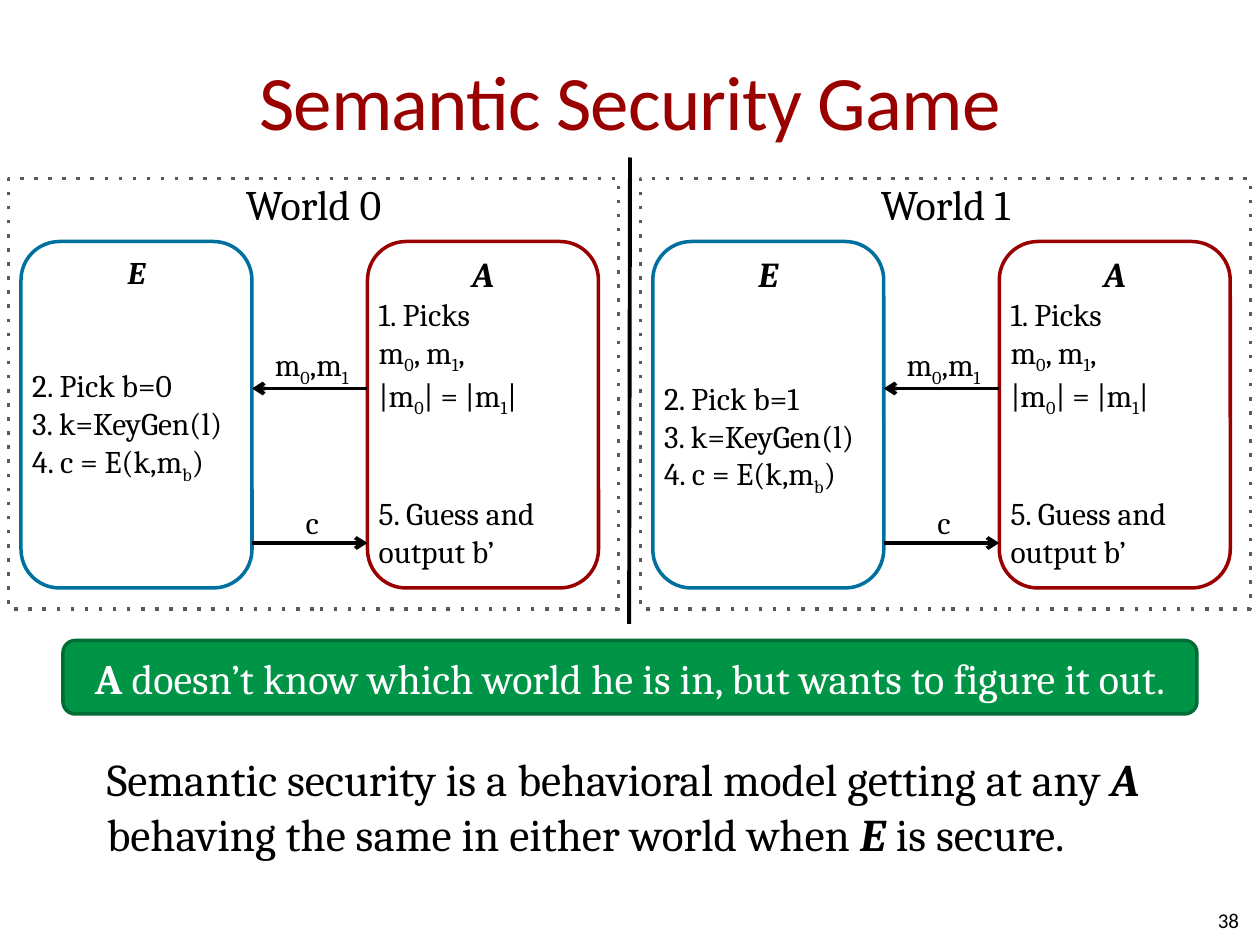
from lxml import etree
from pptx import Presentation
from pptx.dml.color import RGBColor
from pptx.enum.shapes import MSO_CONNECTOR, MSO_SHAPE
from pptx.enum.text import MSO_ANCHOR, PP_ALIGN
from pptx.oxml.ns import qn
from pptx.util import Pt

LEFT, CENTER, RIGHT = PP_ALIGN.LEFT, PP_ALIGN.CENTER, PP_ALIGN.RIGHT
TOP, MIDDLE = MSO_ANCHOR.TOP, MSO_ANCHOR.MIDDLE
RECT, ROUNDED = MSO_SHAPE.RECTANGLE, MSO_SHAPE.ROUNDED_RECTANGLE
STRAIGHT = MSO_CONNECTOR.STRAIGHT

BLACK, WHITE, RED, BLUE = "000000", "FFFFFF", "990000", "00709E"
GRAY, GREEN, DARK_GREEN = "595A5A", "009446", "006D34"
LINE_HEIGHT = 1.2


def rgb(value):
    return RGBColor.from_string(value)


def write(shape, text, size=18, font="Cambria", color=BLACK, align=LEFT,
          before=0, italic=True, tracking=0):
    """Add a paragraph; *x* is emphasised, _x is a subscript character."""
    frame = shape.text_frame
    first = frame.paragraphs[0]
    paragraph = frame.add_paragraph() if first.runs else first
    paragraph.alignment = align
    paragraph.space_before = Pt(before)

    def add_run(words, strong, subscript=False):
        run = paragraph.add_run()
        run.text = words
        run.font.size = Pt(size)
        run.font.name = font
        run.font.color.rgb = rgb(color)
        run.font.bold = strong
        run.font.italic = strong and italic
        properties = run.font._element
        if subscript:
            properties.set("baseline", "-25000")
        if tracking:
            properties.set("spc", str(int(tracking * 100)))

    for row, line in enumerate(text.split("\n")):
        if row:
            paragraph.add_line_break()
        for index, piece in enumerate(line.split("*")):
            strong = index % 2 == 1
            for order, part in enumerate(piece.split("_")):
                if order:
                    add_run(part[0], strong, subscript=True)
                    part = part[1:]
                if part:
                    add_run(part, strong)


def set_frame(shape, anchor, inset_x, inset_y):
    frame = shape.text_frame
    frame.word_wrap = True
    frame.vertical_anchor = anchor
    frame.margin_left = frame.margin_right = Pt(inset_x)
    frame.margin_top = frame.margin_bottom = Pt(inset_y)


def add_text(slide, box, text, anchor=TOP, inset_x=7.2, inset_y=3.6, **style):
    label = slide.shapes.add_textbox(*map(Pt, box))
    set_frame(label, anchor, inset_x, inset_y)
    write(label, text, **style)


def add_box(slide, kind, box, line, fill=None, anchor=TOP):
    shape = slide.shapes.add_shape(kind, *map(Pt, box))
    shape.shadow.inherit = False
    if fill:
        shape.fill.solid()
        shape.fill.fore_color.rgb = rgb(fill)
    else:
        shape.fill.background()
    shape.line.color.rgb = rgb(line)
    shape.line.width = Pt(2)
    set_frame(shape, anchor, 0, 0)
    return shape


def add_line(slide, start, end, arrow=False):
    line = slide.shapes.add_connector(STRAIGHT, *map(Pt, start + end))
    line.line.color.rgb = rgb(BLACK)
    line.line.width = Pt(2.25)
    properties = line.element.spPr
    if arrow:
        etree.SubElement(properties.find(qn("a:ln")), qn("a:tailEnd"), type="arrow")
    etree.SubElement(properties, qn("a:effectLst"))


def add_world(slide, box, bit, encryptor_size):
    left, top, width, height = box
    party_top, party_width, party_height = top + 36, 132, 198
    encryptor_left, adversary_left = left + 7, left + 205
    encryptor_right = encryptor_left + party_width

    encryptor = add_box(slide, ROUNDED,
                        (encryptor_left, party_top, party_width, party_height),
                        BLUE, WHITE)
    write(encryptor, "*E*", size=encryptor_size, align=CENTER)
    write(encryptor, f"2. Pick b={bit}", before=2 * LINE_HEIGHT * encryptor_size)
    write(encryptor, "3. k=KeyGen(l)")
    write(encryptor, "4. c = E(k,m_b)")

    adversary = add_box(slide, ROUNDED,
                        (adversary_left, party_top, party_width, party_height),
                        RED, WHITE)
    write(adversary, "*A*", size=20, align=CENTER)
    write(adversary, "1. Picks\nm_0, m_1,\n|m_0| = |m_1|")
    write(adversary, "5. Guess and output b’", before=2 * LINE_HEIGHT * 18)

    messages_y, cipher_y = top + 120, top + 208.3
    add_line(slide, (adversary_left, messages_y), (encryptor_right, messages_y), True)
    add_text(slide, (left + 145, messages_y - 28.3, 72, 42), "m_0,m_1")
    add_line(slide, (encryptor_right, cipher_y), (adversary_left, cipher_y), True)
    add_text(slide, (left + 137.5, cipher_y - 26.6, 72, 30), "c", align=CENTER)

    border = add_box(slide, RECT, box, GRAY)
    etree.SubElement(border.element.spPr.find(qn("a:ln")), qn("a:prstDash"), val="dot")
    write(border, f"World {bit}", size=24, align=CENTER)


def add_banner(slide, box):
    banner = add_box(slide, ROUNDED, box, DARK_GREEN, GREEN, MIDDLE)
    write(banner, "*A* doesn’t know which world he is in, but wants to figure it out.",
          size=24, color=WHITE, align=CENTER, italic=False)


def main():
    deck = Presentation()
    deck.slide_width, deck.slide_height = Pt(720), Pt(540)
    slide = deck.slides.add_slide(deck.slide_layouts[6])

    add_text(slide, (36, 12, 648, 90), "Semantic Security Game", MIDDLE, inset_x=0,
             size=44, font="Calibri", color=RED, align=CENTER, tracking=-0.5)
    add_text(slide, (540, 511, 168, 29), "38", MIDDLE, inset_x=0, inset_y=0,
             size=12, font="Calibri", align=RIGHT)
    for bit, encryptor_size in enumerate((18, 20)):
        add_world(slide, (5 + 361 * bit, 102, 348.5, 246), bit, encryptor_size)
    add_line(slide, (360, 90), (359.5, 356.5))
    add_banner(slide, (36, 366, 648, 42))
    add_text(slide, (54, 426, 612, 78),
             "Semantic security is a behavioral model getting at any *A* "
             "behaving the same in either world when *E* is secure.", size=25.9)
    deck.save("out.pptx")


if __name__ == "__main__":
    main()
